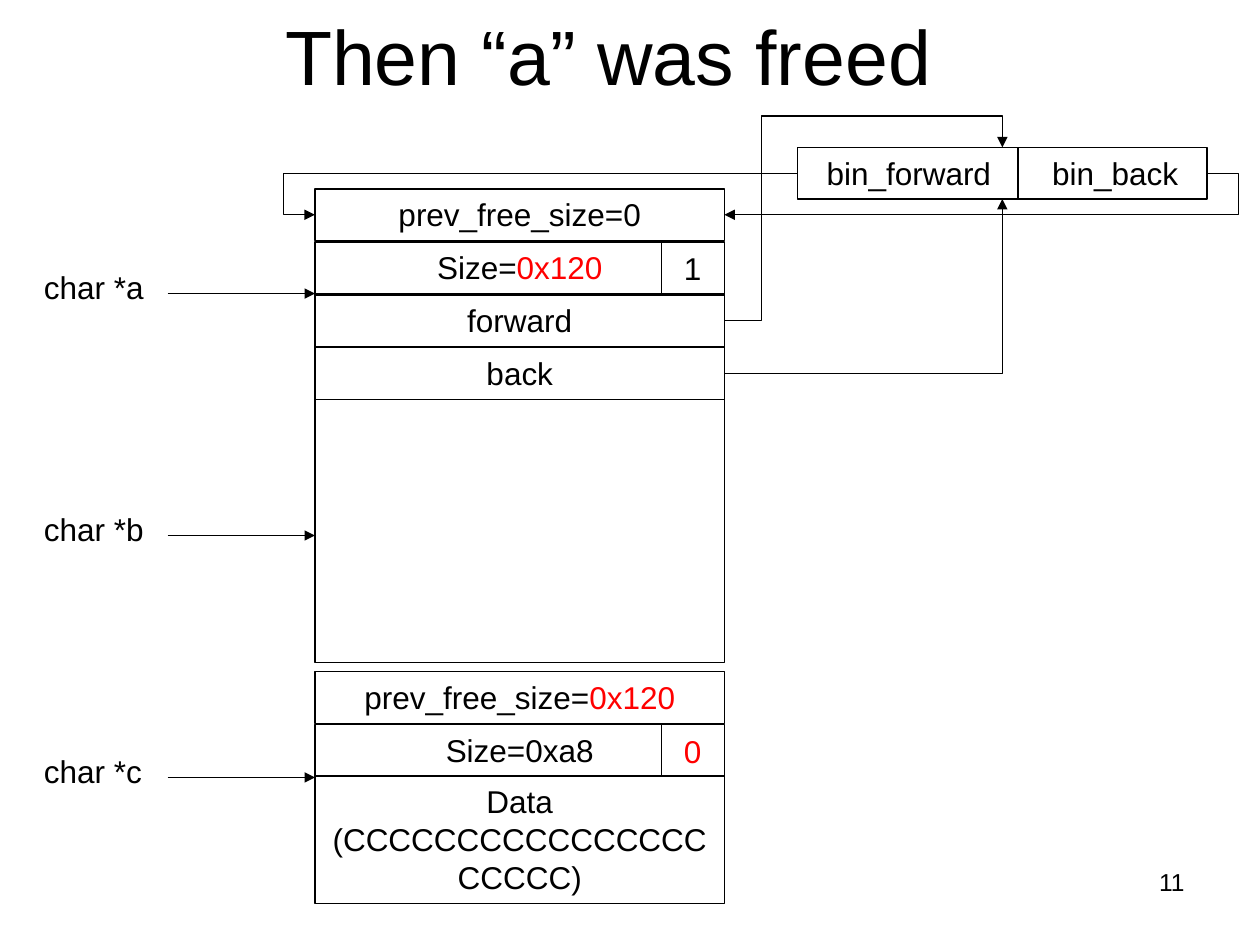
from lxml.etree import SubElement
from pptx import Presentation
from pptx.dml.color import RGBColor
from pptx.enum.shapes import MSO_CONNECTOR as Connector, MSO_SHAPE as Shape
from pptx.enum.text import MSO_ANCHOR as Anchor, PP_ALIGN as Align
from pptx.oxml.ns import qn
from pptx.util import Inches, Pt

COLORS = {"ink": "000000", "changed": "FF0000"}
FONT = "Arial"
SLIDE_W, SLIDE_H = 10, 7.5

# Text is a list of (words, colour) pieces.
TITLE = [("Then “a” was freed", "ink")]
PAGE = [("11", "ink")]
CHUNKS = [
    {"top": 1.5, "flag": [("1", "ink")], "body": [], "body_height": 2.93,
     "rows": [[("prev_free_size=0", "ink")],
              [("Size=", "ink"), ("0x120", "changed")],
              [("forward", "ink")],
              [("back", "ink")]]},
    {"top": 5.33, "flag": [("0", "changed")], "body_height": 1.01,
     "body": [("Data (CCCCCCCCCCCCCCCCCCCCC)", "ink")],
     "rows": [[("prev_free_size=", "ink"), ("0x120", "changed")],
              [("Size=0xa8", "ink")]]},
]
BIN = [("bin_forward\tbin_back", "ink")]
POINTERS = {"char *a": 2.33, "char *b": 4.25, "char *c": 6.17}

# Grid, in inches
LEFT, WIDTH = 2.5, 3.25
RIGHT = LEFT + WIDTH
ROW_STEP, ROW_H = 0.42, 0.41
HEADER_H = 2 * ROW_STEP - 0.01
FLAG_X = RIGHT - 0.5
BIN_LEFT, BIN_TOP = 6.33, 1.17
BIN_RIGHT, BIN_BOTTOM = BIN_LEFT + WIDTH, BIN_TOP + ROW_H
BIN_SPLIT, BIN_TAB, BIN_INSET = 8.08, 1.79, 0.23
BIN_MID_X, BIN_MID_Y = BIN_LEFT + WIDTH / 2, BIN_TOP + ROW_H / 2
LABEL_X, LABEL_W, LABEL_H = 0.25, 1.08, 0.4


def row_middle(row):
    return CHUNKS[0]["top"] + row * ROW_STEP + ROW_H / 2


# start, end, preset, bend positions as shares of the span
LINKS = [
    ((BIN_LEFT, BIN_MID_Y), (LEFT, row_middle(0)), "bentConnector3", [1.065]),
    ((BIN_RIGHT, BIN_MID_Y), (RIGHT, row_middle(0)), "bentConnector3", [-0.065]),
    ((RIGHT, row_middle(2)), (BIN_MID_X, BIN_TOP), "bentConnector4", [0.132, 1.181]),
    ((RIGHT, row_middle(3)), (BIN_MID_X, BIN_BOTTOM), "bentConnector2", []),
]

deck = Presentation()
deck.slide_width, deck.slide_height = Inches(SLIDE_W), Inches(SLIDE_H)
slide = deck.slides.add_slide(deck.slide_layouts[6])


def color(name):
    return RGBColor.from_string(COLORS[name])


def write(shape, pieces, size=18, align=Align.LEFT, anchor=Anchor.TOP):
    frame = shape.text_frame
    layout = {"word_wrap": True, "vertical_anchor": anchor}
    for attribute, value in layout.items():
        setattr(frame, attribute, value)
    paragraph = frame.paragraphs[0]
    paragraph.alignment = align
    for words, ink in pieces:
        run = paragraph.add_run()
        run.text = words
        for attribute, value in {"name": FONT, "size": Pt(size)}.items():
            setattr(run.font, attribute, value)
        run.font.color.rgb = color(ink)


def label(pieces, x, y, w, h, **text_format):
    write(slide.shapes.add_textbox(*map(Inches, (x, y, w, h))), pieces, **text_format)


def cell(pieces, x, y, h=ROW_H, align=Align.CENTER):
    box = slide.shapes.add_shape(Shape.RECTANGLE, *map(Inches, (x, y, WIDTH, h)))
    box.shadow.inherit = False
    box.fill.background()
    box.line.color.rgb = color("ink")
    box.line.width = Pt(0.75)
    write(box, pieces, align=align)
    return box


def link(start, end, arrow=True, preset="line", bends=()):
    kind = Connector.STRAIGHT if preset == "line" else Connector.ELBOW
    connector = slide.shapes.add_connector(kind, *map(Inches, (*start, *end)))
    connector.line.color.rgb = color("ink")
    connector.line.width = Pt(0.75)
    properties = connector._element.spPr
    geometry = properties.find(qn("a:prstGeom"))
    geometry.set("prst", preset)
    for number, share in enumerate(bends, 1):
        SubElement(geometry.find(qn("a:avLst")), qn("a:gd"),
                   name=f"adj{number}", fmla=f"val {round(share * 100000)}")
    if arrow:
        SubElement(properties.find(qn("a:ln")), qn("a:tailEnd"), type="triangle")
    SubElement(properties, qn("a:effectLst"))


def divider(x, top):
    link((x, top), (x, top + ROW_H), arrow=False)


label(TITLE, 0.33, 0, 9, 0.87, size=44, align=Align.CENTER, anchor=Anchor.MIDDLE)

for chunk in CHUNKS:
    top = chunk["top"]
    cell(chunk["body"], LEFT, top + HEADER_H, chunk["body_height"])
    for row, pieces in enumerate(chunk["rows"]):
        cell(pieces, LEFT, top + row * ROW_STEP)
    divider(FLAG_X, top + ROW_STEP)
    label(chunk["flag"], FLAG_X + 0.08, top + ROW_STEP + 0.01, 0.5, LABEL_H)

for name, y in POINTERS.items():
    label([(name, "ink")], LABEL_X, y - 0.25, LABEL_W, LABEL_H)
    link((LABEL_X + LABEL_W, y), (LEFT, y))

bin_head = cell(BIN, BIN_LEFT, BIN_TOP, align=Align.LEFT)
bin_head.text_frame.margin_left = Inches(BIN_INSET)
tabs = SubElement(bin_head.text_frame.paragraphs[0]._p.get_or_add_pPr(), qn("a:tabLst"))
SubElement(tabs, qn("a:tab"), pos=str(Inches(BIN_TAB)), algn="l")
divider(BIN_SPLIT, BIN_TOP)

for start, end, preset, bends in LINKS:
    link(start, end, preset=preset, bends=bends)

label(PAGE, 7.17, 6.83, 2.33, 0.52, size=14, align=Align.RIGHT)

deck.save("out.pptx")
